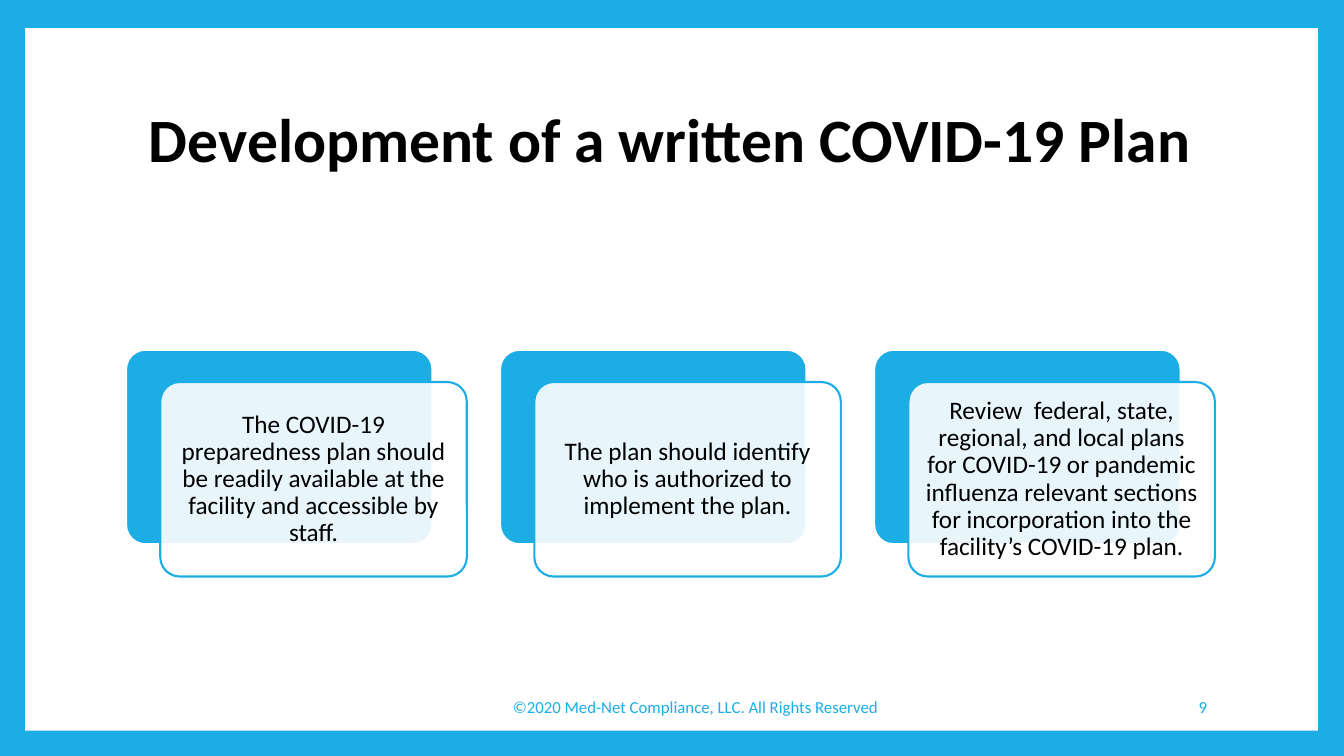
"""Build the slide on developing a written COVID-19 plan."""
from lxml import etree
from pptx import Presentation
from pptx.dml.color import RGBColor
from pptx.enum.shapes import MSO_SHAPE
from pptx.enum.text import MSO_ANCHOR, PP_ALIGN
from pptx.oxml.ns import qn
from pptx.util import Inches, Pt

TITLE = "Development of a written COVID-19 Plan"
PLAN_STEPS = [
    "The COVID-19 preparedness plan should be readily available at the facility and accessible by staff.",
    "The plan should identify who is authorized to implement the plan.",
    "Review  federal, state, regional, and local plans for COVID-19 or pandemic influenza relevant "
    "sections for incorporation into the facility’s COVID-19 plan.",
]
COPYRIGHT = "©2020 Med-Net Compliance, LLC. All Rights Reserved"
PAGE_NUMBER = "9"

BLUE = RGBColor(0x1C, 0xAD, 0xE4)
WHITE = RGBColor(0xFF, 0xFF, 0xFF)
BLACK = RGBColor(0, 0, 0)
FONT = "Calibri"
RECTANGLE, ROUNDED = MSO_SHAPE.RECTANGLE, MSO_SHAPE.ROUNDED_RECTANGLE
CENTER, RIGHT = PP_ALIGN.CENTER, PP_ALIGN.RIGHT
MIDDLE = MSO_ANCHOR.MIDDLE

CARD_LEFT, CARD_TOP, CARD_PITCH = 1.25, 3.47, 3.71
CARD_WIDTH, CARD_HEIGHT = 3.04, 1.93
FRONT_SHIFT_X, FRONT_SHIFT_Y = 0.34, 0.32
CARD_INSET = 0.07


def add_panel(slide, kind, box, fill, outline=None):
    panel = slide.shapes.add_shape(kind, *map(Inches, box))
    panel.shadow.inherit = False
    panel.fill.solid()
    panel.fill.fore_color.rgb = fill
    if outline is None:
        panel.line.fill.background()
    else:
        panel.line.color.rgb = outline
        panel.line.width = Pt(1.5)
    if kind == ROUNDED:
        panel.adjustments[0] = 0.1
    return panel


def set_opacity(panel, percent):
    color = panel.fill._xPr.find(qn("a:solidFill"))[0]
    etree.SubElement(color, qn("a:alpha")).set("val", str(percent * 1000))


def write(holder, text, size, color, align=CENTER, bold=False, spacing=1.0):
    frame = holder.text_frame
    frame.text = text
    frame.word_wrap = True
    frame.vertical_anchor = MIDDLE
    paragraph = frame.paragraphs[0]
    paragraph.alignment = align
    paragraph.line_spacing = spacing
    font = paragraph.runs[0].font
    font.name, font.size, font.bold = FONT, Pt(size), bold
    font.color.rgb = color


def add_label(slide, box, *style, **options):
    write(slide.shapes.add_textbox(*map(Inches, box)), *style, **options)


def add_card(slide, index, step):
    left = CARD_LEFT + index * CARD_PITCH
    add_panel(slide, ROUNDED, (left, CARD_TOP, CARD_WIDTH, CARD_HEIGHT), BLUE, WHITE)
    front_box = (left + FRONT_SHIFT_X, CARD_TOP + FRONT_SHIFT_Y, CARD_WIDTH, CARD_HEIGHT)
    front = add_panel(slide, ROUNDED, front_box, WHITE, BLUE)
    set_opacity(front, 90)
    write(front, step, 18, BLACK, spacing=0.9)
    frame = front.text_frame
    frame.margin_left = frame.margin_right = Inches(CARD_INSET)
    frame.margin_top = frame.margin_bottom = Inches(CARD_INSET)


def main():
    deck = Presentation()
    deck.slide_width, deck.slide_height = Inches(13.33), Inches(7.5)
    slide = deck.slides.add_slide(deck.slide_layouts[6])
    slide.background.fill.solid()
    slide.background.fill.fore_color.rgb = BLUE
    add_panel(slide, RECTANGLE, (0.25, 0.28, 12.82, 6.97), WHITE)
    add_label(slide, (1.25, 0.67, 10.8, 1.48), TITLE, 44, BLACK, bold=True, spacing=0.9)
    for index, step in enumerate(PLAN_STEPS):
        add_card(slide, index, step)
    add_label(slide, (4.32, 6.81, 5.16, 0.4), COPYRIGHT, 12, BLUE)
    add_label(slide, (10.2, 6.81, 1.87, 0.4), PAGE_NUMBER, 12, BLUE, align=RIGHT)
    deck.save("out.pptx")


if __name__ == "__main__":
    main()
